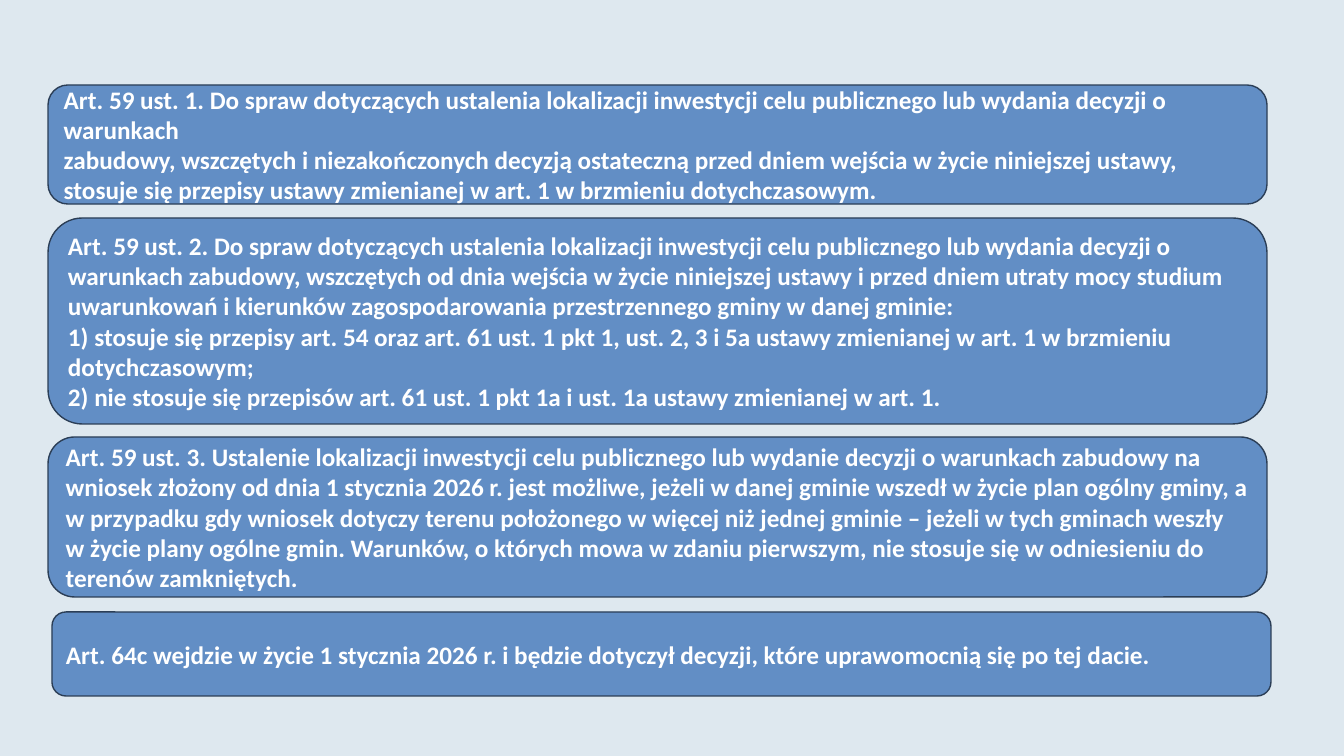
from dataclasses import dataclass

from pptx import Presentation
from pptx.dml.color import RGBColor
from pptx.enum.shapes import MSO_SHAPE
from pptx.enum.text import MSO_ANCHOR, PP_ALIGN
from pptx.util import Pt

PROVISIONS = [
    {
        "left": 48, "top": 85, "height": 119,
        "paragraphs": [
            "Art. 59 ust. 1. Do spraw dotyczących ustalenia lokalizacji inwestycji celu publicznego "
            "lub wydania decyzji o warunkach",
            "zabudowy, wszczętych i niezakończonych decyzją ostateczną przed dniem wejścia w życie "
            "niniejszej ustawy, stosuje się przepisy ustawy zmienianej w art. 1 w brzmieniu "
            "dotychczasowym.",
        ],
    },
    {
        "left": 48, "top": 218, "height": 206,
        "paragraphs": [
            "Art. 59 ust. 2. Do spraw dotyczących ustalenia lokalizacji inwestycji celu publicznego "
            "lub wydania decyzji o warunkach zabudowy, wszczętych od dnia wejścia w życie niniejszej "
            "ustawy i przed dniem utraty mocy studium uwarunkowań i kierunków zagospodarowania "
            "przestrzennego gminy w danej gminie:",
            "1) stosuje się przepisy art. 54 oraz art. 61 ust. 1 pkt 1, ust. 2, 3 i 5a ustawy "
            "zmienianej w art. 1 w brzmieniu dotychczasowym;",
            "2) nie stosuje się przepisów art. 61 ust. 1 pkt 1a i ust. 1a ustawy zmienianej w art. 1.",
        ],
    },
    {
        "left": 48, "top": 437, "height": 160,
        "paragraphs": [
            "Art. 59 ust. 3. Ustalenie lokalizacji inwestycji celu publicznego lub wydanie decyzji "
            "o warunkach zabudowy na wniosek złożony od dnia 1 stycznia 2026 r. jest możliwe, jeżeli "
            "w danej gminie wszedł w życie plan ogólny gminy, a w przypadku gdy wniosek dotyczy "
            "terenu położonego w więcej niż jednej gminie – jeżeli w tych gminach weszły w życie "
            "plany ogólne gmin. Warunków, o których mowa w zdaniu pierwszym, nie stosuje się "
            "w odniesieniu do terenów zamkniętych.",
        ],
    },
    {
        "left": 52, "top": 612, "height": 84,
        "paragraphs": [
            "Art. 64c wejdzie w życie 1 stycznia 2026 r. i będzie dotyczył decyzji, które "
            "uprawomocnią się po tej dacie.",
        ],
    },
]

SLIDE_WIDTH, SLIDE_HEIGHT = 1344, 756
BOX_WIDTH = 1219
EMU_PER_PX = 914400 / 100.8


@dataclass(frozen=True)
class Theme:
    background: str = "DEE8EF"
    box: str = "628EC5"
    outline: str = "2B3E56"
    text: str = "FFFFFF"
    font: str = "Calibri"
    text_size: int = 18
    outline_width: int = 1


THEME = Theme()


def px(length):
    return round(length * EMU_PER_PX)


def color(value):
    return RGBColor.from_string(value)


def write_text(text_frame, paragraphs, *, size, text_color, bold, alignment):
    text_frame.word_wrap = True
    text_frame.vertical_anchor = MSO_ANCHOR.MIDDLE
    for index, text in enumerate(paragraphs):
        paragraph = text_frame.add_paragraph() if index else text_frame.paragraphs[0]
        paragraph.alignment = alignment
        run = paragraph.add_run()
        run.text = text
        run.font.name = THEME.font
        run.font.size = Pt(size)
        run.font.bold = bold
        run.font.color.rgb = color(text_color)


def add_provision(slide, provision):
    shape = slide.shapes.add_shape(
        MSO_SHAPE.ROUNDED_RECTANGLE,
        px(provision["left"]), px(provision["top"]), px(BOX_WIDTH), px(provision["height"]),
    )
    shape.shadow.inherit = False
    shape.fill.solid()
    shape.fill.fore_color.rgb = color(THEME.box)
    shape.line.color.rgb = color(THEME.outline)
    shape.line.width = Pt(THEME.outline_width)
    write_text(
        shape.text_frame, provision["paragraphs"], size=THEME.text_size,
        text_color=THEME.text, bold=True, alignment=PP_ALIGN.LEFT,
    )


def main():
    presentation = Presentation()
    presentation.slide_width = px(SLIDE_WIDTH)
    presentation.slide_height = px(SLIDE_HEIGHT)
    slide = presentation.slides.add_slide(presentation.slide_layouts[6])
    slide.background.fill.solid()
    slide.background.fill.fore_color.rgb = color(THEME.background)
    for provision in PROVISIONS:
        add_provision(slide, provision)
    presentation.save("out.pptx")


if __name__ == "__main__":
    main()
